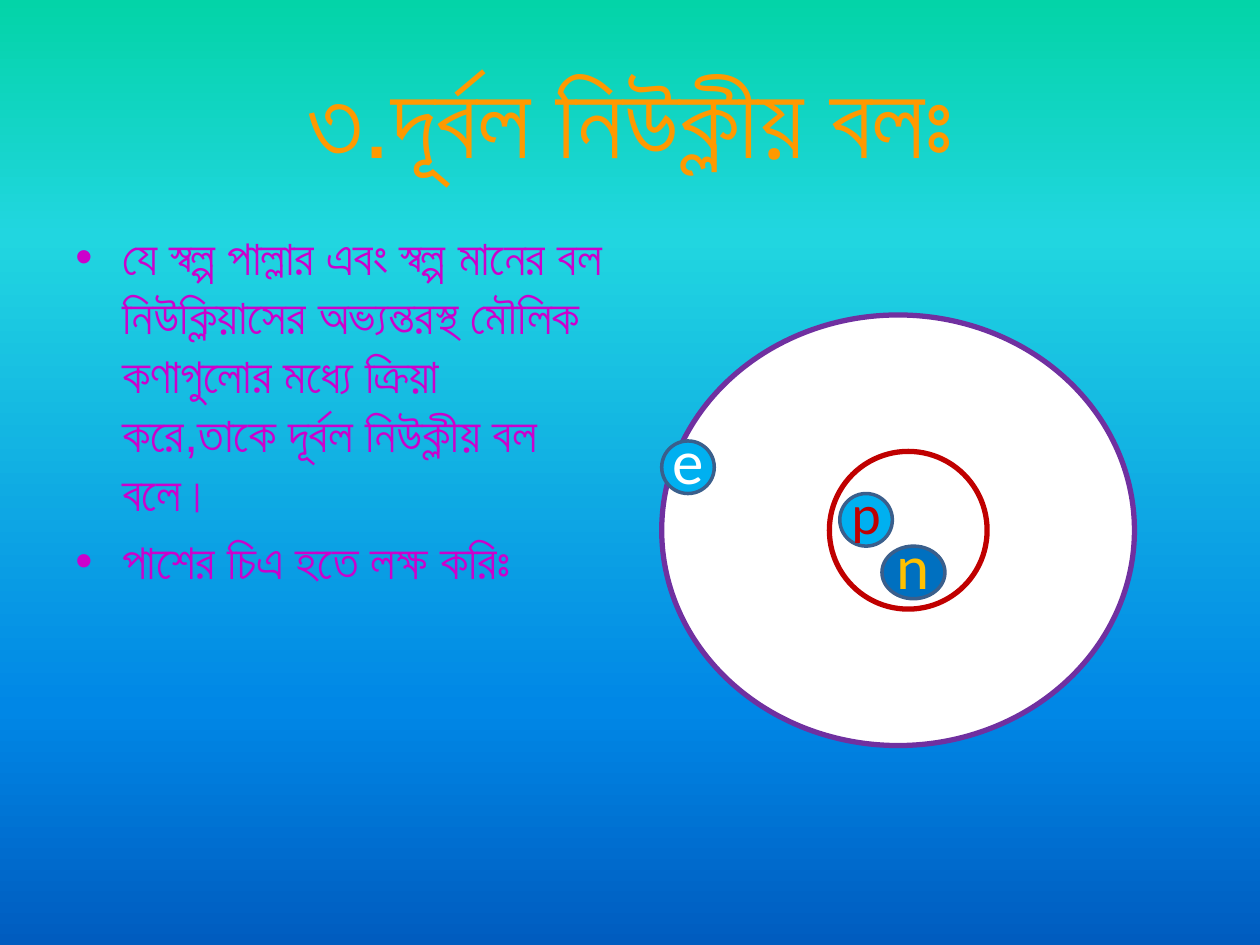
from dataclasses import dataclass

import lxml.etree
import pptx
import pptx.dml.color
import pptx.enum.shapes
import pptx.enum.text
import pptx.oxml.ns
import pptx.util

Cm = pptx.util.Cm
Pt = pptx.util.Pt
qn = pptx.oxml.ns.qn


@dataclass(frozen=True)
class Theme:
    sky: tuple = ((0, "03D4A8"), (25, "21D6E0"), (75, "0087E6"), (100, "005CBF"))
    title: str = "FF9900"
    body: str = "CC00CC"
    white: str = "FFFFFF"
    orbit: str = "7030A0"
    nucleus: str = "C00000"
    light_blue: str = "00B0F0"
    dark_blue: str = "0070C0"
    particle_edge: str = "3A5F8C"
    gold: str = "FFC000"
    text_font: str = "Arial"
    label_font: str = "Calibri"
    title_size: int = 60
    body_size: int = 28
    proton_size: int = 32
    label_size: int = 36
    ring_width: int = 3
    particle_width: int = 2


THEME = Theme()
TITLE = "৩.দূর্বল নিউক্লীয় বলঃ"
POINTS = (
    "যে স্বল্প পাল্লার এবং স্বল্প মানের বল নিউক্লিয়াসের অভ্যন্তরস্থ মৌলিক "
    "কণাগুলোর মধ্যে ক্রিয়া\vকরে,তাকে দূর্বল নিউক্লীয় বল বলে।",
    "পাশের চিএ হতে লক্ষ করিঃ",
)


def rgb(value):
    return pptx.dml.color.RGBColor.from_string(value)


def paint_background(slide, stops):
    """Fill the slide from top to bottom with the (percent, colour) stops."""
    fill = slide.background.fill
    fill.gradient()
    fill.gradient_angle = 270
    stop_list = slide.element.find(".//" + qn("a:gsLst"))
    for stop in list(stop_list):
        stop_list.remove(stop)
    for percent, colour in stops:
        stop = lxml.etree.SubElement(stop_list, qn("a:gs"), pos=str(percent * 1000))
        lxml.etree.SubElement(stop, qn("a:srgbClr"), val=colour)


def style_paragraph(paragraph, font, size, colour):
    paragraph.font.name = font
    paragraph.font.size = Pt(size)
    paragraph.font.color.rgb = rgb(colour)


def add_text_area(slide, left, top, width, height):
    frame = slide.shapes.add_textbox(Cm(left), Cm(top), Cm(width), Cm(height)).text_frame
    frame.word_wrap = True
    return frame


def add_title(slide):
    frame = add_text_area(slide, 1.27, 0.76, 22.86, 3.18)
    frame.vertical_anchor = pptx.enum.text.MSO_ANCHOR.MIDDLE
    heading = frame.paragraphs[0]
    heading.text = TITLE
    heading.alignment = pptx.enum.text.PP_ALIGN.CENTER
    style_paragraph(heading, THEME.text_font, THEME.title_size, THEME.title)


def add_bullet(paragraph, indent):
    properties = paragraph._p.get_or_add_pPr()
    properties.set("marL", str(indent))
    properties.set("indent", str(-indent))
    spacing = lxml.etree.SubElement(properties, qn("a:spcBef"))
    lxml.etree.SubElement(spacing, qn("a:spcPct"), val="20000")
    lxml.etree.SubElement(properties, qn("a:buFont"), typeface=THEME.text_font)
    lxml.etree.SubElement(properties, qn("a:buChar"), char="•")


def add_points(slide):
    frame = add_text_area(slide, 1.27, 4.45, 11.22, 12.57)
    for number, text in enumerate(POINTS):
        point = frame.add_paragraph() if number else frame.paragraphs[0]
        point.text = text
        add_bullet(point, Cm(0.95))
        style_paragraph(point, THEME.text_font, THEME.body_size, THEME.body)


def add_ellipse(slide, left, top, width, height, fill, line, line_width):
    ellipse = slide.shapes.add_shape(
        pptx.enum.shapes.MSO_SHAPE.OVAL, Cm(left), Cm(top), Cm(width), Cm(height))
    ellipse.shadow.inherit = False
    ellipse.fill.solid()
    ellipse.fill.fore_color.rgb = rgb(fill)
    ellipse.line.color.rgb = rgb(line)
    ellipse.line.width = Pt(line_width)
    return ellipse


def add_particle(slide, letter, left, top, width, fill, colour, size):
    """Add a small ellipse; its bottom margin lifts the lowercase letter to the middle."""
    particle = add_ellipse(slide, left, top, width, 1.06, fill,
                           THEME.particle_edge, THEME.particle_width)
    frame = particle.text_frame
    frame.word_wrap = True
    frame.margin_left = frame.margin_right = frame.margin_top = 0
    frame.margin_bottom = Cm(0.32)
    frame.vertical_anchor = pptx.enum.text.MSO_ANCHOR.MIDDLE
    label = frame.paragraphs[0]
    label.text = letter
    label.alignment = pptx.enum.text.PP_ALIGN.CENTER
    style_paragraph(label, THEME.label_font, size, colour)


def add_atom(slide):
    for left, top, width, height, colour in (
        (13.34, 6.35, 9.53, 8.68, THEME.orbit),
        (16.72, 9.1, 3.18, 3.18, THEME.nucleus),
    ):
        add_ellipse(slide, left, top, width, height, THEME.white, colour, THEME.ring_width)
    for particle in (
        ("p", 16.93, 9.95, 1.06, THEME.light_blue, THEME.nucleus, THEME.proton_size),
        ("n", 17.78, 11.01, 1.27, THEME.dark_blue, THEME.gold, THEME.label_size),
        ("e", 13.34, 8.89, 1.06, THEME.light_blue, THEME.white, THEME.label_size),
    ):
        add_particle(slide, *particle)


def main():
    deck = pptx.Presentation()
    deck.slide_width, deck.slide_height = Cm(25.4), Cm(19.05)
    slide = deck.slides.add_slide(deck.slide_layouts[6])
    paint_background(slide, THEME.sky)
    add_title(slide)
    add_points(slide)
    add_atom(slide)
    deck.save("out.pptx")


if __name__ == "__main__":
    main()
